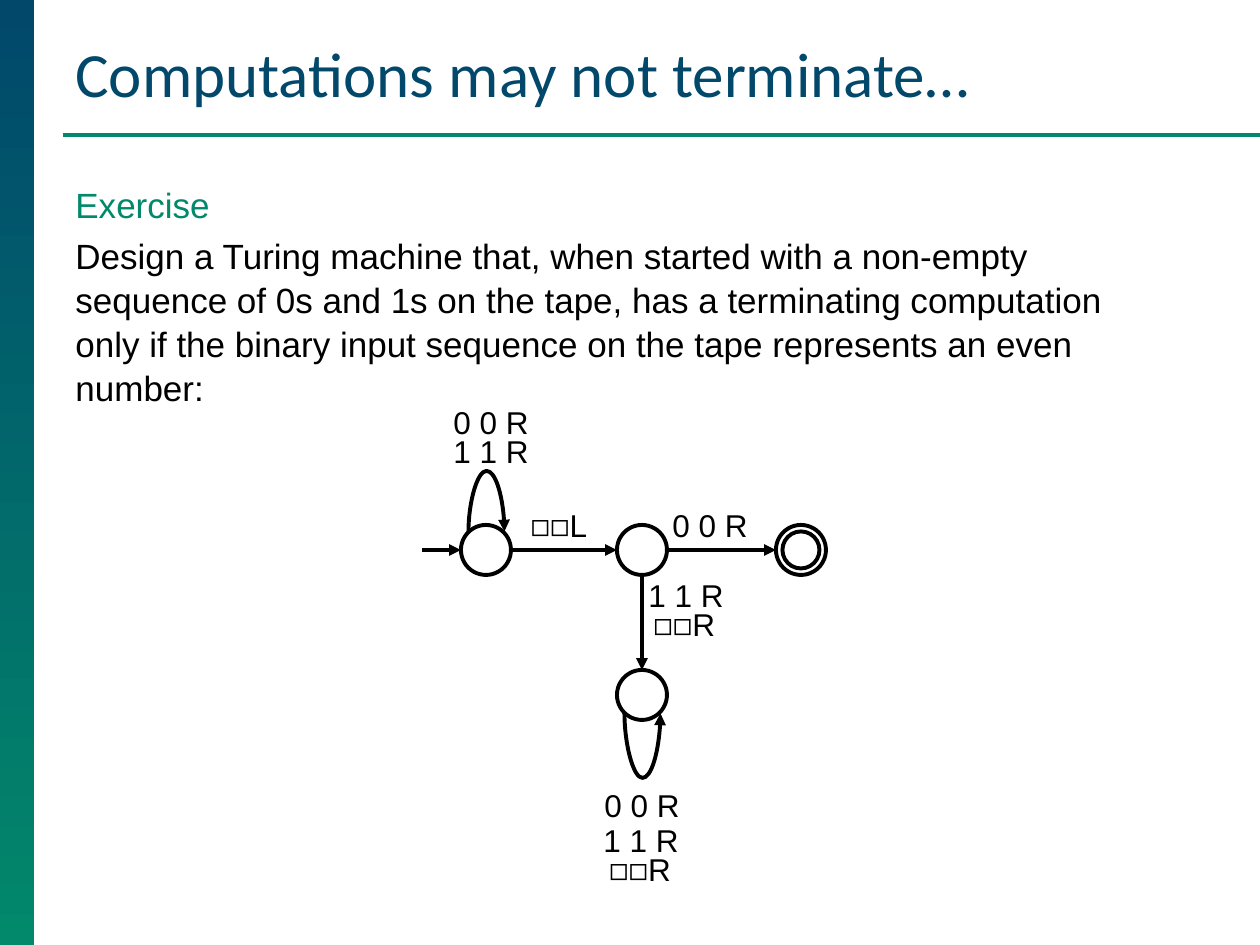
from dataclasses import dataclass

import pptx
import pptx.dml.color
import pptx.enum.shapes
import pptx.enum.text
import pptx.oxml
import pptx.oxml.ns
import pptx.util

SHAPE = pptx.enum.shapes.MSO_SHAPE
CONNECTOR = pptx.enum.shapes.MSO_CONNECTOR
ALIGN = pptx.enum.text.PP_ALIGN
ANCHOR = pptx.enum.text.MSO_ANCHOR
AUTO_SIZE = pptx.enum.text.MSO_AUTO_SIZE
PX = 914400 // 126
RADIUS = 25


@dataclass(frozen=True)
class Theme:
    """Colours, fonts and sizes of the slide."""
    navy: str = "01486B"
    green: str = "02886B"
    black: str = "000000"
    heading_font: str = "Calibri"
    text_font: str = "Arial"
    title_size: int = 36
    body_size: int = 20
    label_size: int = 18
    line_width: float = 2.25


THEME = Theme()


def px(*lengths):
    """Turn pixel lengths into EMU."""
    return [pptx.util.Emu(length * PX) for length in lengths]


def rgb(code):
    """Turn a hex code into a colour."""
    return pptx.dml.color.RGBColor.from_string(code)


def add_sidebar(page):
    """Add the vertical gradient band."""
    band = page.shapes.add_shape(SHAPE.RECTANGLE, *px(0, 0, 34, 945))
    band.shadow.inherit = False
    band.line.fill.background()
    band.fill.gradient()
    band.fill.gradient_angle = 270
    for stop, code in zip(band.fill.gradient_stops, (THEME.navy, THEME.green)):
        stop.color.rgb = rgb(code)


def add_text(page, place, lines, size, font=THEME.text_font, align=ALIGN.LEFT, wrap=True):
    """Add a text box with one paragraph for each (text, colour) pair."""
    box = page.shapes.add_textbox(*px(*place))
    frame = box.text_frame
    frame.word_wrap = wrap
    frame.auto_size = AUTO_SIZE.NONE if wrap else AUTO_SIZE.SHAPE_TO_FIT_TEXT
    for index, (text, code) in enumerate(lines):
        para = frame.paragraphs[0] if index == 0 else frame.add_paragraph()
        para.text = text
        para.alignment = align
        para.font.name = font
        para.font.size = pptx.util.Pt(size)
        para.font.color.rgb = rgb(code)
        if index:
            para.space_before = pptx.util.Pt(size * 0.2)
    return frame


def add_label(page, left, top, text, align=ALIGN.LEFT):
    """Add a transition label."""
    place = (left, top, 102, 50)
    add_text(page, place, [(text, THEME.black)], THEME.label_size, align=align, wrap=False)


def add_state(page, centre, final=False):
    """Add a state circle, drawn as a ring when it is final."""
    x, y = centre
    place = px(x - RADIUS, y - RADIUS, 2 * RADIUS, 2 * RADIUS)
    state = page.shapes.add_shape(SHAPE.DONUT if final else SHAPE.OVAL, *place)
    if final:
        state.adjustments[0] = 0.13
    state.shadow.inherit = False
    state.fill.background()
    state.line.color.rgb = rgb(THEME.black)
    state.line.width = pptx.util.Pt(THEME.line_width)


def add_line(page, start, end, kind=CONNECTOR.STRAIGHT, code=THEME.black, arrow=True):
    """Add a connector, with an arrowhead unless told otherwise."""
    line = page.shapes.add_connector(kind, *px(*start, *end))
    line.line.color.rgb = rgb(code)
    line.line.width = pptx.util.Pt(THEME.line_width)
    if arrow:
        head = pptx.oxml.ns.qn("a:tailEnd")
        line.line._get_or_add_ln().makeelement(head)
        pptx.oxml.xmlchemy.etree.SubElement(line.line._get_or_add_ln(), head, type="triangle")
    effects = pptx.oxml.ns.qn("a:effectLst")
    pptx.oxml.xmlchemy.etree.SubElement(line._element.spPr, effects)
    return line


def add_loop(page, centre, depth, upward):
    """Add a curved self-transition above or below the given centre."""
    x, y = centre
    half = 18
    top, bottom = y - half, y + half
    start, end = ((x + 1, bottom), (x, top)) if upward else ((x + 1, top), (x, bottom))
    loop = add_line(page, start, end, CONNECTOR.CURVE)
    properties = loop._element.spPr
    turn = 90 if upward else 270
    properties.find(pptx.oxml.ns.qn("a:xfrm")).set("rot", str(turn * 60000))
    guides = properties.find(".//" + pptx.oxml.ns.qn("a:avLst"))
    guide = pptx.oxml.ns.qn("a:gd")
    pptx.oxml.xmlchemy.etree.SubElement(guides, guide, name="adj1", fmla=f"val {depth * 100000}")


def add_machine(page):
    """Draw the states, transitions and labels of the machine."""
    start, check, accept, reject = (486, 550), (642, 550), (801, 550), (642, 695)
    for centre in (start, check, accept, reject):
        add_state(page, centre, final=centre == accept)
    add_line(page, (422, 550), (start[0] - RADIUS, 550))
    for source, target in ((start, check), (check, accept)):
        add_line(page, (source[0] + RADIUS, 550), (target[0] - RADIUS, 550))
    add_line(page, (642, 550 + RADIUS), (642, reject[1] - RADIUS))
    add_loop(page, (486, 532), 62, upward=True)
    add_loop(page, (642, 713), 66, upward=False)

    for left, top, text in (
        (441, 397, "0 0 R"), (441, 426, "1 1 R"), (660, 500, "0 0 R"),
        (636, 570, "1 1 R"), (641, 599, "◻◻R"),
    ):
        add_label(page, left, top, text)
    for left, top, text in (
        (508, 500, "◻◻L"), (591, 780, "0 0 R"), (590, 815, "1 1 R"), (589, 844, "◻◻R"),
    ):
        add_label(page, left, top, text, ALIGN.CENTER)


def main():
    """Build and save the slide."""
    deck = pptx.Presentation()
    deck.slide_width, deck.slide_height = px(1260, 945)
    page = deck.slides.add_slide(deck.slide_layouts[6])
    add_sidebar(page)
    add_line(page, (63, 135), (1260, 135), code=THEME.green, arrow=False)
    title = [("Computations may not terminate…", THEME.navy)]
    frame = add_text(page, (63, 26, 1169, 90), title, THEME.title_size, THEME.heading_font)
    frame.vertical_anchor = ANCHOR.BOTTOM
    exercise = (
        "Design a Turing machine that, when started with a non-empty sequence of 0s and 1s "
        "on the tape, has a terminating computation only if the binary input sequence on the "
        "tape represents an even number:"
    )
    lines = [("Exercise", THEME.green), (exercise, THEME.black)]
    frame = add_text(page, (63, 175, 1124, 694), lines, THEME.body_size)
    for para in frame.paragraphs:
        para.line_spacing = 1.05
    add_machine(page)
    deck.save("out.pptx")


if __name__ == "__main__":
    main()
